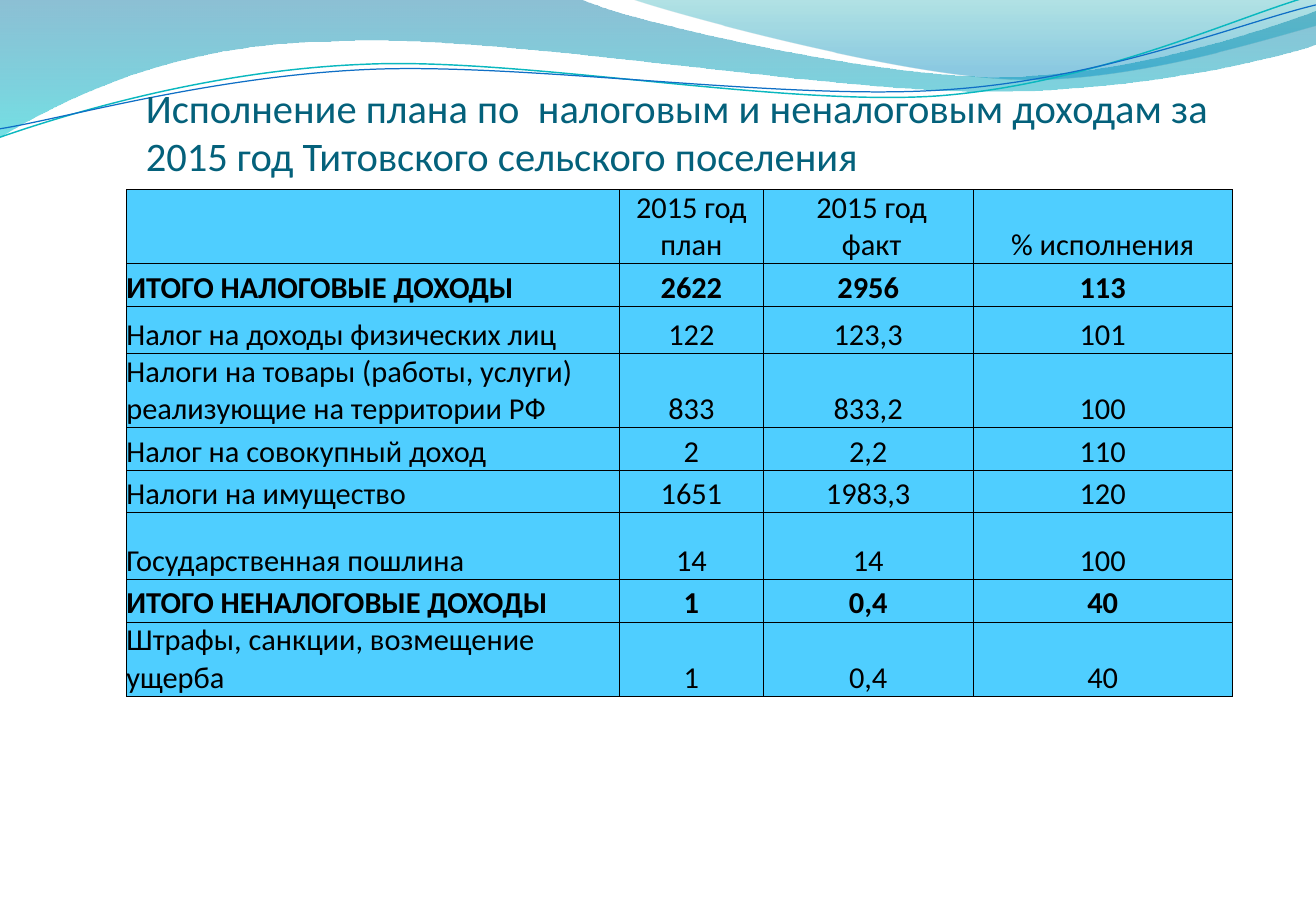
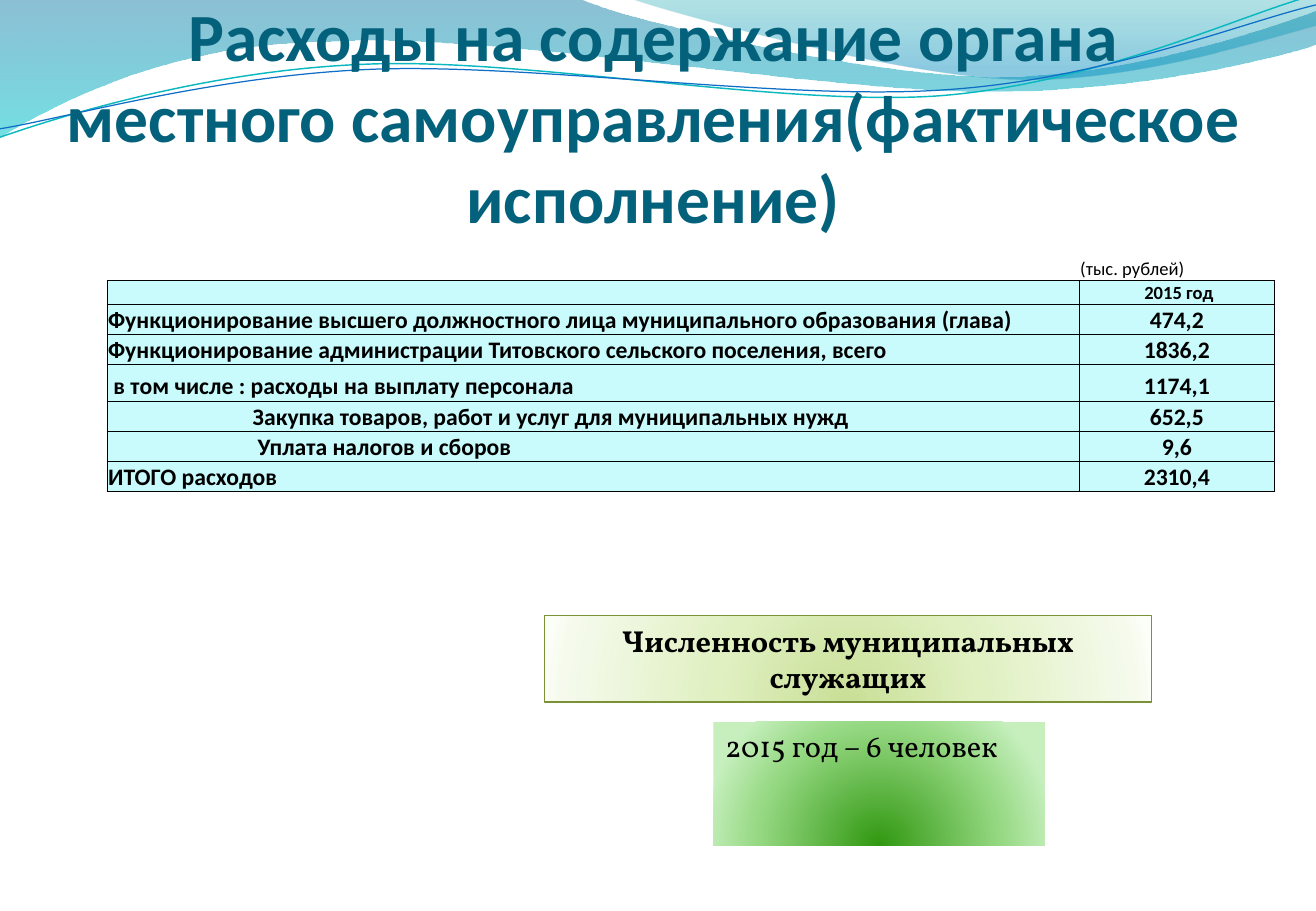
import pptx
import pptx.dml.color
import pptx.enum.shapes
import pptx.enum.text
import pptx.oxml
import pptx.oxml.ns
import pptx.util
from pptx.util import Inches

RGBColor = pptx.dml.color.RGBColor
ALIGN = pptx.enum.text.PP_ALIGN
ANCHOR = pptx.enum.text.MSO_ANCHOR
qn = pptx.oxml.ns.qn
NAMESPACE = pptx.oxml.ns.nsdecls("a")

# Shared look
PAGE_FILL = RGBColor(0xFF, 0xFF, 0xFF)
TITLE_COLOR = RGBColor(0x04, 0x61, 0x7B)
BLACK = RGBColor(0, 0, 0)
INCOME_FILL = RGBColor(0x4F, 0xCE, 0xFF)
EXPENSE_FILL = RGBColor(0xC9, 0xFA, 0xFC)
TEAL_LINE = RGBColor(0x0A, 0xB8, 0xBF)
BLUE_LINE = RGBColor(0x0F, 0x6F, 0xC6)
OLIVE_LINE = RGBColor(0x7B, 0x91, 0x35)
TABLE_FONT = "Calibri"
BOX_FONT = "Vollkorn"

# Gradient stops: position, colour, opacity in percent
WIDE_STOPS = [(0, RGBColor(0x00, 0x74, 0xA1), 45), (100, RGBColor(0x00, 0xC6, 0xCF), 55)]
CORNER_STOPS = [(0, RGBColor(0x00, 0xA1, 0xA9), 30), (80, RGBColor(0x00, 0x8B, 0xBF), 45)]
STAFF_STOPS = [(0, RGBColor(0xC9, 0xDF, 0x97), 100), (43, RGBColor(0xE0, 0xF0, 0xC1), 100),
               (93, RGBColor(0xF5, 0xFA, 0xEC), 100), (100, RGBColor(0xFC, 0xFE, 0xF8), 100)]
COUNT_STOPS = [(0, RGBColor(0x31, 0x98, 0x11), 100), (68, RGBColor(0x95, 0xD8, 0x82), 100),
               (100, RGBColor(0xC6, 0xEF, 0xBD), 100)]
DOWNWARD = '<a:lin ang="5400000" scaled="0"/>'
RADIAL = '<a:path path="circle"><a:fillToRect l="50000" t="130000" r="50000" b="-30000"/></a:path>'

# Wave outlines: a pair is a straight step, six numbers are a Bézier step
WIDE_WAVE = [(0, -0.01), (4.77, -0.01), (5.15, 0.17, 7.19, 0.63, 8.22, 0.63),
             (9.24, 0.63, 10.38, 0.26, 10.83, 0.09), (10.85, 0.36),
             (10.65, 0.44, 9.42, 0.76, 8.08, 0.75), (6.74, 0.75, 4.14, 0.28, 2.79, 0.34),
             (1.4, 0.35, 0.5, 0.83, -0.01, 1.13), (0, -0.01)]
CORNER_WAVE = [(5.19, -0.01), (5.52, 0.11, 7.39, 0.62, 8.33, 0.65),
               (9.27, 0.69, 10.42, 0.32, 10.83, 0.21), (10.83, 0), (5.19, -0.01)]
TEAL_CURVE = [(0, 1.13), (0.52, 0.95, 1.71, 0.58, 3, 0.53), (4.28, 0.47, 6.42, 0.88, 7.72, 0.79),
              (9.02, 0.69, 10.17, 0.14, 10.81, -0.04)]
BLUE_CURVE = [(0, 1.06), (0.51, 0.98, 1.77, 0.62, 3.07, 0.57), (4.36, 0.52, 6.47, 0.83, 7.76, 0.74),
              (9.06, 0.66, 10.2, 0.19, 10.83, 0.04)]

# Table contents
INCOME_ROWS = [
    ("", "2015 год план", " 2015 год\n факт", "% исполнения"),
    ("ИТОГО НАЛОГОВЫЕ ДОХОДЫ", "2622", "2956", "113"),
    ("Налог на доходы физических лиц", "122", "123,3", "101"),
    ("Налоги на товары (работы, услуги) реализующие на территории РФ", "833", "833,2", "100"),
    ("Налог на совокупный доход", "2", "2,2", "110"),
    ("Налоги на имущество", "1651", "1983,3", "120"),
    ("Государственная пошлина", "14", "14", "100"),
    ("ИТОГО НЕНАЛОГОВЫЕ ДОХОДЫ", "1", "0,4", "40"),
    ("Штрафы, санкции, возмещение ущерба", "1", "0,4", "40"),
]
EXPENSE_ROWS = [
    ("", "(тыс. рублей)"),
    ("", " 2015 год"),
    ("Функционирование высшего должностного лица муниципального образования (глава)", "474,2"),
    ("Функционирование администрации Титовского сельского поселения, всего", "1836,2"),
    (" в том числе : расходы на выплату персонала", "1174,1"),
    ("Закупка товаров, работ и услуг для муниципальных нужд", "652,5"),
    ("Уплата налогов и сборов", "9,6"),
    ("ИТОГО расходов", "2310,4"),
]
EXPENSE_INDENTS = {5: 1.19, 6: 1.23}


def set_gradient(shape, stops, direction):
    marks = "".join(
        f'<a:gs pos="{position * 1000}"><a:srgbClr val="{color}">'
        f'<a:alpha val="{opacity * 1000}"/></a:srgbClr></a:gs>'
        for position, color, opacity in stops)
    gradient = pptx.oxml.parse_xml(
        f'<a:gradFill {NAMESPACE} rotWithShape="1"><a:gsLst>{marks}</a:gsLst>{direction}</a:gradFill>')
    shape.fill.background()
    properties = shape.element.spPr
    properties.replace(properties.find(qn("a:noFill")), gradient)


def set_line(shape, color, width):
    if color is None:
        shape.line.fill.background()
    else:
        shape.line.color.rgb = color
        shape.line.width = pptx.util.Pt(width)


def style_text(frame, font_name, size, color, bold=False, align=ALIGN.LEFT):
    for para in frame.paragraphs:
        para.alignment = align
        para.font.name = font_name
        para.font.size = pptx.util.Pt(size)
        para.font.bold = bold
        para.font.color.rgb = color
        if not para.text:
            # An empty line takes its height from the end mark
            para._p.append(pptx.oxml.parse_xml(f'<a:endParaRPr {NAMESPACE} sz="{size * 100}"/>'))


def set_margins(holder, left, top, right, bottom):
    holder.margin_left, holder.margin_top = Inches(left), Inches(top)
    holder.margin_right, holder.margin_bottom = Inches(right), Inches(bottom)


def bend_outline(shape, steps):
    """Join the three straight steps of each Bézier step into one curve."""
    straight = iter(list(shape.element.iter(qn("a:lnTo"))))
    for step in steps[1:]:
        parts = [next(straight) for _ in range(len(step) // 2)]
        if len(parts) == 1:
            continue
        curve = pptx.oxml.parse_xml(f"<a:cubicBezTo {NAMESPACE}/>")
        parts[0].addprevious(curve)
        for part in parts:
            curve.append(part[0])
            part.getparent().remove(part)


def add_wave(page, steps, stops=None, line_color=None, width=0):
    points = [(Inches(step[i]), Inches(step[i + 1])) for step in steps for i in range(0, len(step), 2)]
    builder = page.shapes.build_freeform(*points[0])
    builder.add_line_segments(points[1:], close=stops is not None)
    wave = builder.convert_to_shape()
    bend_outline(wave, steps)
    wave.shadow.inherit = False
    if stops:
        set_gradient(wave, stops, DOWNWARD)
    else:
        wave.fill.background()
    set_line(wave, line_color, width)
    return wave


def decorate_layout(layout, page):
    """Draw the waves on a page, then move them behind everything on its layout."""
    layout.background.fill.solid()
    layout.background.fill.fore_color.rgb = PAGE_FILL
    waves = [
        add_wave(page, WIDE_WAVE, WIDE_STOPS),
        add_wave(page, CORNER_WAVE, CORNER_STOPS),
        add_wave(page, TEAL_CURVE, line_color=TEAL_LINE, width=0.85),
        add_wave(page, BLUE_CURVE, line_color=BLUE_LINE, width=0.75),
    ]
    for position, wave in enumerate(waves, start=2):
        layout.shapes.element.insert(position, wave.element)


def set_title(page, text, place, size, bold=False, align=ALIGN.LEFT):
    title = page.shapes.title
    title.left, title.top, title.width, title.height = map(Inches, place)
    frame = title.text_frame
    frame.text = text
    frame.word_wrap = True
    frame.auto_size = pptx.enum.text.MSO_AUTO_SIZE.NONE
    frame.vertical_anchor = ANCHOR.BOTTOM
    set_margins(frame, 0, 0.05, 0, 0)
    style_text(frame, TABLE_FONT, size, TITLE_COLOR, bold, align)


def set_borders(cell, visible_sides):
    properties = cell._tc.get_or_add_tcPr()
    for side in "LRTB":
        paint = '<a:solidFill><a:srgbClr val="000000"/></a:solidFill>' if side in visible_sides else "<a:noFill/>"
        properties.append(pptx.oxml.parse_xml(f'<a:ln{side} {NAMESPACE} w="6350">{paint}</a:ln{side}>'))


def add_grid(page, rows, left, top, widths, heights):
    frame = page.shapes.add_table(len(rows), len(widths), Inches(left), Inches(top),
                                  Inches(sum(widths)), Inches(sum(heights)))
    table = frame.table
    table.first_row = table.horz_banding = False
    for column, width in zip(table.columns, widths):
        column.width = Inches(width)
    for row, height in zip(table.rows, heights):
        row.height = Inches(height)
    return table


def fill_cell(cell, text, size, bold, align, margins, fill, sides="LRTB"):
    cell.text = text
    cell.vertical_anchor = ANCHOR.BOTTOM
    set_margins(cell, *margins)
    set_borders(cell, sides)
    if fill is None:
        cell.fill.background()
    else:
        cell.fill.solid()
        cell.fill.fore_color.rgb = fill
    style_text(cell.text_frame, TABLE_FONT, size, BLACK, bold, align)


def add_box(page, text, place, stops, line_color=None, bold=False, align=ALIGN.LEFT):
    box = page.shapes.add_shape(pptx.enum.shapes.MSO_SHAPE.RECTANGLE, *map(Inches, place))
    box.shadow.inherit = False
    set_gradient(box, stops, RADIAL)
    set_line(box, line_color, 0.75)
    frame = box.text_frame
    frame.text = text
    frame.word_wrap = True
    frame.vertical_anchor = ANCHOR.TOP
    style_text(frame, BOX_FONT, 18, BLACK, bold, align)


def build_income(page):
    set_title(page, "Исполнение плана по  налоговым и неналоговым доходам за 2015 год "
              "Титовского сельского поселения", (1.2, 0, 9.09, 1.48), 24)
    table = add_grid(page, INCOME_ROWS, 1.04, 1.56, [4.06, 1.18, 1.73, 2.13],
                     [0.35, 0.35, 0.39, 0.55, 0.35, 0.35, 0.55, 0.35, 0.35])
    for row_index, values in enumerate(INCOME_ROWS):
        is_total = values[0].startswith("ИТОГО")
        for column_index, text in enumerate(values):
            align = ALIGN.CENTER if column_index else ALIGN.LEFT
            fill_cell(table.cell(row_index, column_index), text, 18, is_total, align,
                      (0, 0, 0, 0), INCOME_FILL)


def build_expenses(page):
    set_title(page, "Расходы на содержание органа местного самоуправления(фактическое исполнение)",
              (0.5, 0.7, 9.75, 1.25), 40, True, ALIGN.CENTER)
    table = add_grid(page, EXPENSE_ROWS, 0.88, 2.11, [8, 1.61],
                     [0.19, 0.19, 0.24, 0.24, 0.3, 0.25, 0.24, 0.24])
    for row_index, values in enumerate(EXPENSE_ROWS):
        is_unit_row = row_index == 0
        size = 11 if row_index < 2 else 14
        for column_index, text in enumerate(values):
            align = ALIGN.CENTER if column_index and not is_unit_row else ALIGN.LEFT
            indent = 0 if column_index else EXPENSE_INDENTS.get(row_index, 0)
            fill_cell(table.cell(row_index, column_index), text, size, not is_unit_row, align,
                      (0.01 + indent, 0.01, 0.01, 0), None if is_unit_row else EXPENSE_FILL,
                      "B" if is_unit_row else "LRTB")
    # Staff numbers
    add_box(page, "Численность муниципальных служащих", (4.48, 5.07, 5, 0.71),
            STAFF_STOPS, OLIVE_LINE, True, ALIGN.CENTER)
    add_box(page, "2015 год – 6 человек", (5.87, 5.94, 2.73, 1.02), COUNT_STOPS)


def main():
    deck = pptx.Presentation()
    deck.slide_width, deck.slide_height = Inches(10.83), Inches(7.5)
    layout = deck.slide_layouts[5]
    income_page, expense_page = (deck.slides.add_slide(layout) for _ in range(2))
    decorate_layout(layout, income_page)
    build_income(income_page)
    build_expenses(expense_page)
    deck.save("out.pptx")


if __name__ == "__main__":
    main()
